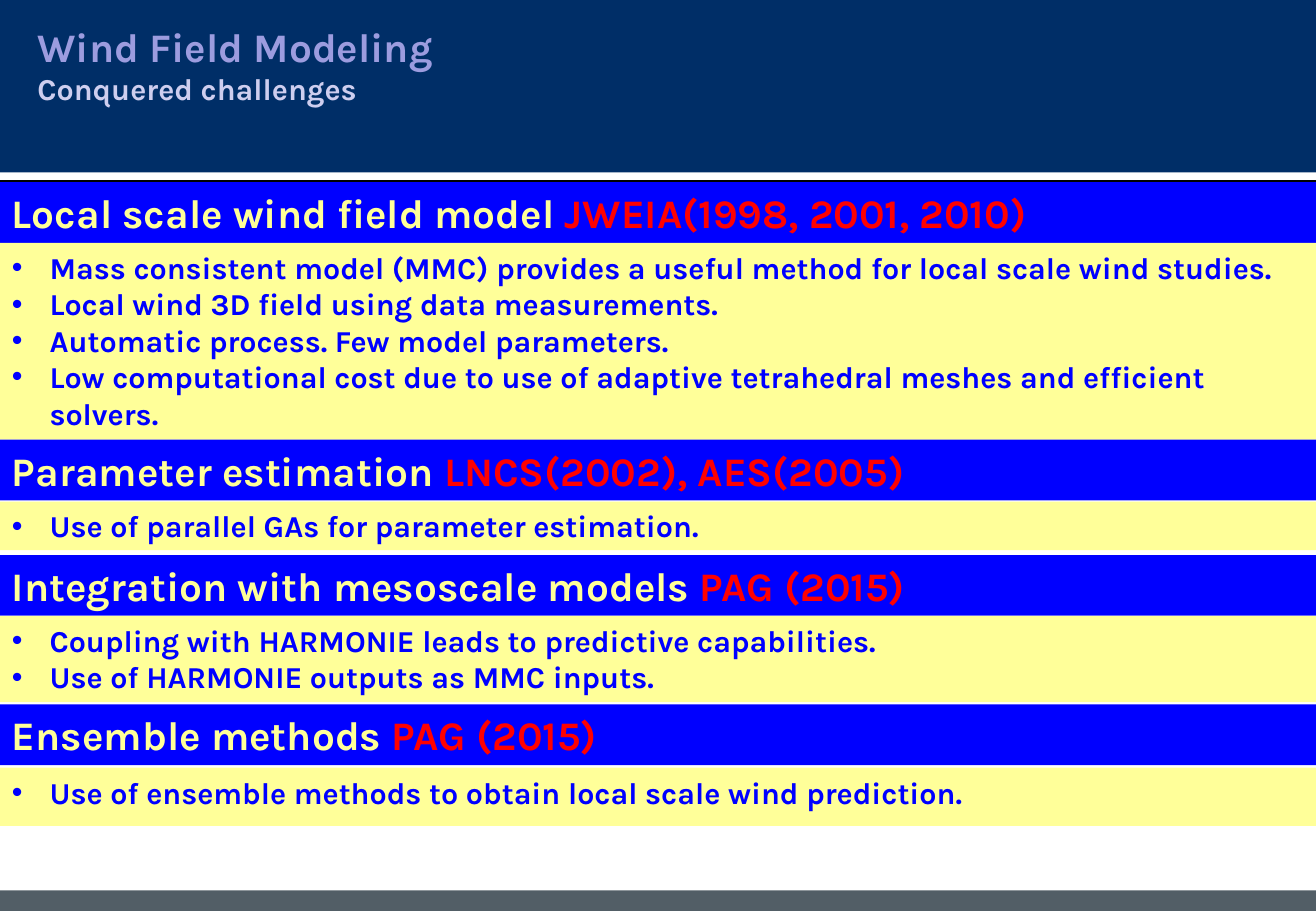
from pptx import Presentation
from pptx.dml.color import RGBColor
from pptx.enum import shapes, text
from pptx.oxml.ns import qn
from pptx.util import Inches, Pt
from lxml import etree

TITLE = "Wind Field Modeling"
SUB = "Conquered challenges"

# head top, body top, body height, heading, citation, bullets
PARTS = [
    (1.5, 2.0, 1.62, "Local scale wind field model ", "JWEIA(1998, 2001, 2010)", [
        "Mass consistent model (MMC) provides a useful method for local scale wind studies.",
        "Local wind 3D field using data measurements.",
        "Automatic process. Few model parameters.",
        "Low computational cost due to use of adaptive tetrahedral meshes and efficient solvers.",
    ]),
    (3.62, 4.13, 0.4, "Parameter estimation ", "LNCS(2002), AES(2005)", [
        "Use of parallel GAs for parameter estimation.",
    ]),
    (4.57, 5.07, 0.71, "Integration with mesoscale models ", "PAG (2015)", [
        "Coupling with HARMONIE leads to predictive capabilities.",
        "Use of HARMONIE outputs as MMC inputs.",
    ]),
    (5.8, 6.32, 0.48, "Ensemble methods ", "PAG (2015)", [
        "Use of ensemble methods to obtain local scale wind prediction.",
    ]),
]

THEME = {
    "font": "Karla", "big": 24, "small": 18,
    "navy": "002E67", "slate": "525E66", "rule": "000000",
    "title": "9C9CDF", "sub": "CECEEF",
    "blue": "0000FF", "cream": "FFFF99", "red": "FF0000",
}
WIDTH, HEIGHT = 10.83, 7.5
HEAD, INDENT = 0.5, 0.31


def color(name):
    return RGBColor.from_string(THEME[name])


def band(slide, top, height, fill):
    """Draw a full-width bar and return its text frame."""
    bar = slide.shapes.add_shape(shapes.MSO_SHAPE.RECTANGLE, 0, Inches(top),
                                 Inches(WIDTH), Inches(height))
    bar.shadow.inherit = False
    bar.fill.solid()
    bar.fill.fore_color.rgb = color(fill)
    bar.line.fill.background()
    frame = bar.text_frame
    frame.word_wrap = True
    frame.vertical_anchor = text.MSO_ANCHOR.TOP
    return frame


def style(para, size):
    para.alignment = text.PP_ALIGN.LEFT
    para.font.name = THEME["font"]
    para.font.size = Pt(THEME[size])
    para.font.bold = True


def add_run(para, words, tint):
    run = para.add_run()
    run.text = words
    run.font.color.rgb = color(tint)
    return run


def bullet(para):
    props = para._p.get_or_add_pPr()
    props.set("marL", str(Inches(INDENT)))
    props.set("indent", str(-Inches(INDENT)))
    etree.SubElement(props, qn("a:buFont")).set("typeface", "Arial")
    etree.SubElement(props, qn("a:buChar")).set("char", "•")


def frame_page(slide):
    """Draw the top bar, the rule, the foot bar and the title."""
    band(slide, 0, 1.42, "navy")
    rule = slide.shapes.add_connector(shapes.MSO_CONNECTOR.STRAIGHT, 0, Inches(1.49),
                                      Inches(WIDTH), Inches(1.49))
    rule.line.color.rgb = color("rule")
    rule.line.width = Pt(0.75)
    etree.SubElement(rule._element.spPr, qn("a:effectLst"))
    band(slide, 7.33, 0.17, "slate")

    box = slide.shapes.add_textbox(Inches(0.21), Inches(0.13), Inches(5.04), Inches(0.79))
    box.text_frame.word_wrap = False
    para = box.text_frame.paragraphs[0]
    style(para, "big")
    add_run(para, TITLE, "title")
    para.add_line_break()
    add_run(para, SUB, "sub").font.size = Pt(THEME["small"])


def section(slide, top, body, height, name, cite, points):
    para = band(slide, top, HEAD, "blue").paragraphs[0]
    style(para, "big")
    add_run(para, name, "cream")
    add_run(para, cite, "red")

    frame = band(slide, body, height, "cream")
    for i, point in enumerate(points):
        para = frame.add_paragraph() if i else frame.paragraphs[0]
        bullet(para)
        style(para, "small")
        add_run(para, point, "blue")


def main():
    deck = Presentation()
    deck.slide_width, deck.slide_height = Inches(WIDTH), Inches(HEIGHT)
    slide = deck.slides.add_slide(deck.slide_layouts[6])
    frame_page(slide)
    for part in PARTS:
        section(slide, *part)
    deck.save("out.pptx")


if __name__ == "__main__":
    main()
